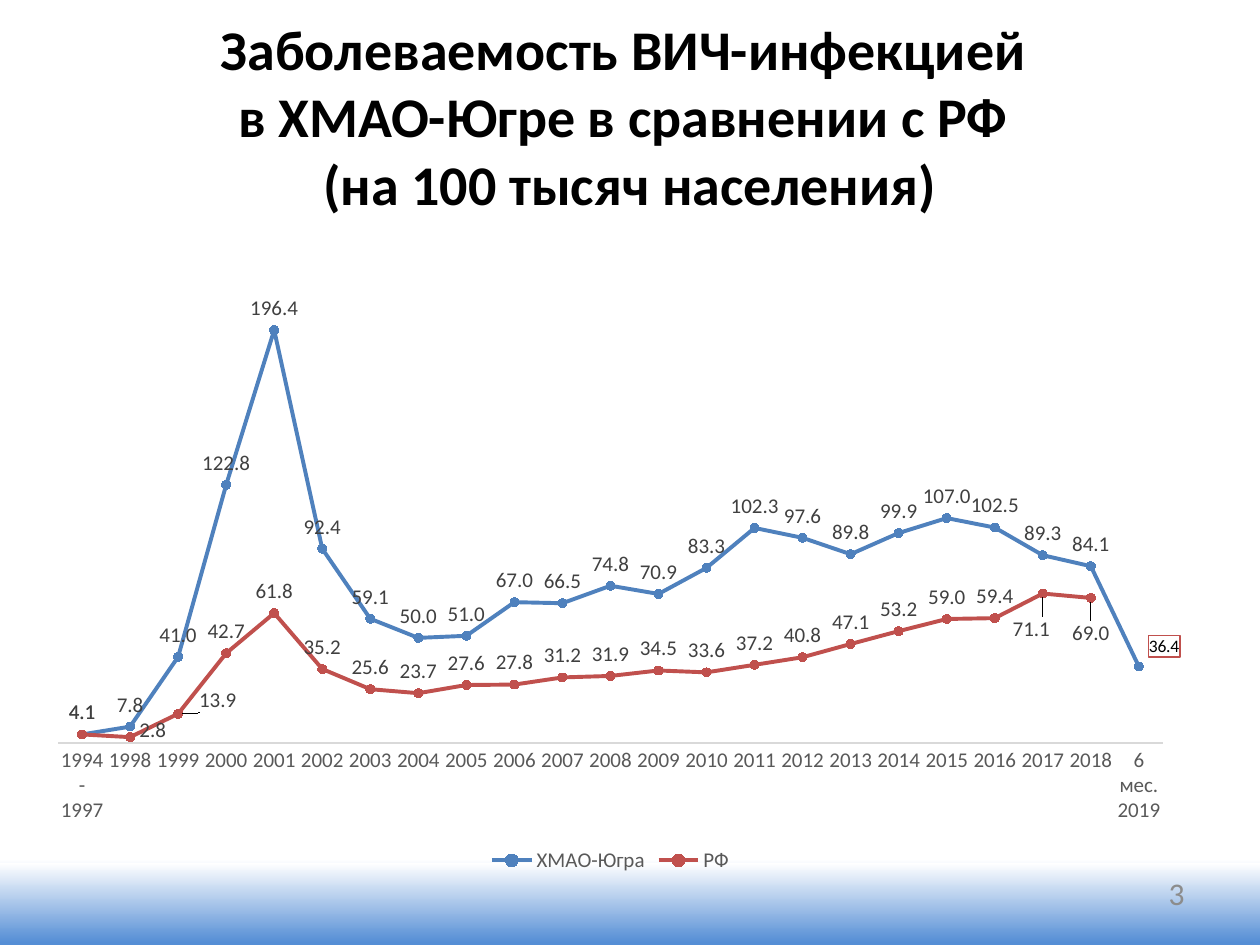
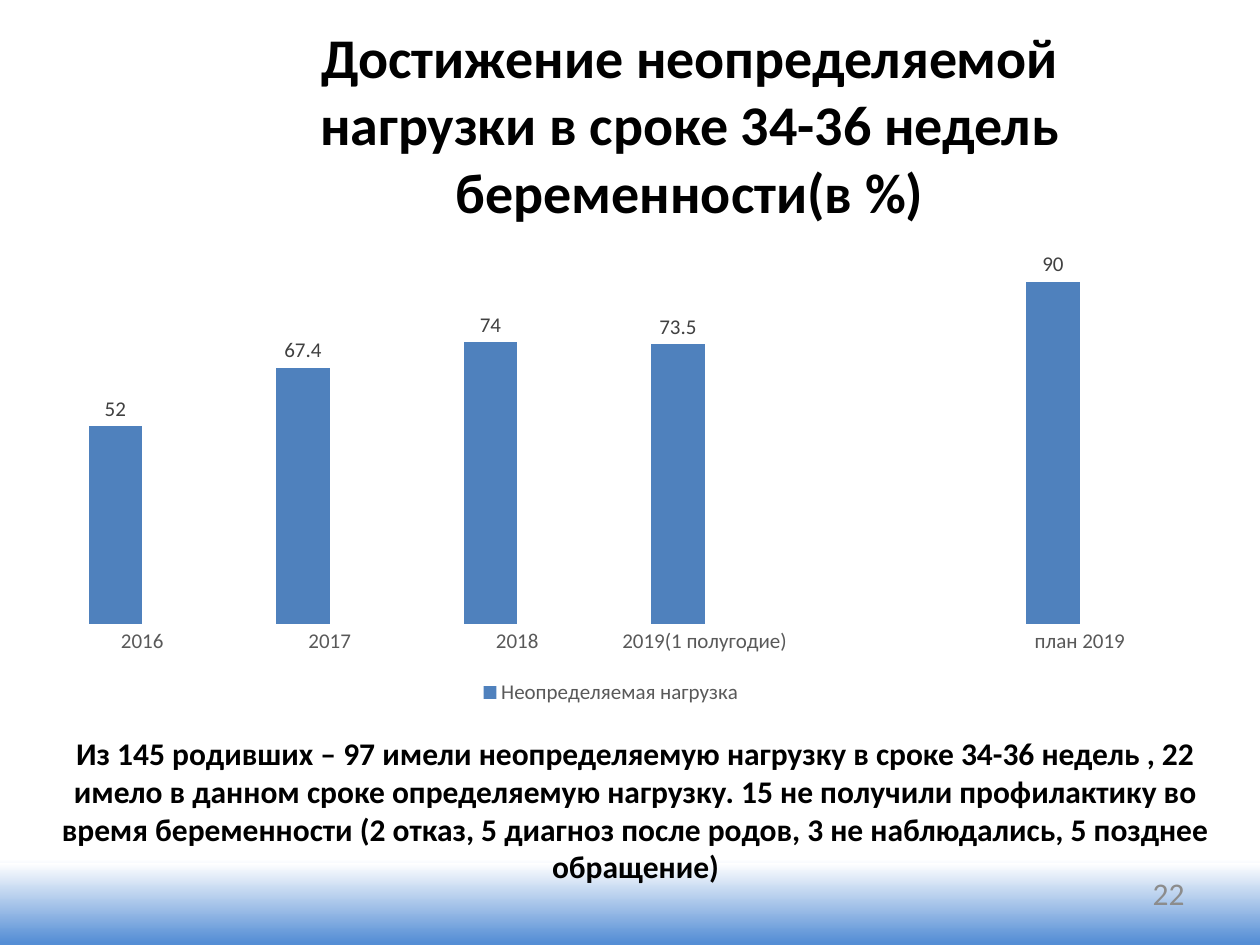
from dataclasses import dataclass

from lxml import etree
from pptx import Presentation
from pptx import util as u
from pptx.chart.data import CategoryChartData
from pptx.dml.color import RGBColor
from pptx.enum import chart as ch, shapes, text
from pptx.oxml import parse_xml
from pptx.oxml.ns import nsdecls, qn

SCALE = 914400 / 126  # EMU in one px


@dataclass(frozen=True)
class Theme:
    face: str = "Calibri"
    black: str = "000000"
    white: str = "FFFFFF"
    band: str = "558ED5"
    page: str = "8C8C8C"
    axis: str = "595959"
    label: str = "404040"
    rule: str = "D9D9D9"
    blue: str = "4F81BD"
    red: str = "C0504D"
    green: str = "9BBB59"
    head: int = 32
    body: int = 18
    small: int = 12
    tiny: int = 10


T = Theme()

YEARS = ["1994-1997", *map(str, range(1998, 2019)), "6 мес.2019"]
YUGRA = [4.1, 7.8, 41, 122.8, 196.4, 92.4, 59.1, 50, 51, 67, 66.5, 74.8,
         70.9, 83.3, 102.3, 97.6, 89.8, 99.9, 107, 102.5, 89.3, 84.1, 36.4]
RUSSIA = [4.1, 2.8, 13.9, 42.7, 61.8, 35.2, 25.6, 23.7, 27.6, 27.8, 31.2, 31.9,
          34.5, 33.6, 37.2, 40.8, 47.1, 53.2, 59, 59.4, 71.1, 69, None]
TERMS = ["2016", "2017", "2018", "2019(1 полугодие)", "", "план 2019"]
LOADS = [52, 67.4, 74, 73.5, None, 90]


# Basics
def px(*nums):
    return [u.Emu(round(n * SCALE)) for n in nums]


def rgb(code):
    return RGBColor.from_string(code)


def put(item, **vals):
    for name, val in vals.items():
        setattr(item, name, val)


def style(font, size, tint, bold=False):
    put(font, name=T.face, size=u.Pt(size), bold=bold)
    font.color.rgb = rgb(tint)


def paint(fill, tint):
    fill.solid()
    fill.fore_color.rgb = rgb(tint)


# Slide parts
def add_band(slide, top):
    band = slide.shapes.add_shape(
        shapes.MSO_SHAPE.ROUNDED_RECTANGLE, *px(0, top, 1260, 945 - top))
    band.adjustments[0] = 0
    band.shadow.inherit = False
    band.line.fill.background()
    band.fill.gradient()
    band.fill.gradient_angle = 90
    for stop, (pos, tint) in zip(band.fill.gradient_stops,
                                 [(0.03, T.band), (1, T.white)]):
        stop.position = pos
        stop.color.rgb = rgb(tint)


def add_text(slide, box, words, size, tint=T.black, bold=True,
             align=text.PP_ALIGN.CENTER):
    frame = slide.shapes.add_textbox(*px(*box)).text_frame
    put(frame, word_wrap=True, vertical_anchor=text.MSO_ANCHOR.MIDDLE)
    para = frame.paragraphs[0]
    para.text = words
    para.alignment = align
    for run in para.runs:
        style(run.font, size, tint, bold)


def add_page(deck, title, box, number):
    slide = deck.slides.add_slide(deck.slide_layouts[6])
    for top in (859, 863):
        add_band(slide, top)
    add_text(slide, box, title, T.head)
    add_text(slide, (1126, 859, 71, 67), number, T.body, T.page, False,
             text.PP_ALIGN.RIGHT)
    return slide


# Charts
def add_chart(slide, kind, box, cats, rows, form, peak, high):
    data = CategoryChartData(number_format=form)
    data.categories = cats
    for name, vals, tint in rows:
        data.add_series(name, vals)
    chart = slide.shapes.add_chart(kind, *px(*box), data).chart
    put(chart, has_title=False, has_legend=True)
    style(chart.font, T.tiny, T.black)
    put(chart.legend, position=ch.XL_LEGEND_POSITION.BOTTOM,
        include_in_layout=False)
    style(chart.legend.font, T.small, T.axis)
    put(chart.value_axis, visible=False, has_major_gridlines=False,
        minimum_scale=0, maximum_scale=peak)
    put(chart.category_axis, major_tick_mark=ch.XL_TICK_MARK.NONE)
    style(chart.category_axis.tick_labels.font, T.small, T.axis)
    chart.plots[0].vary_by_categories = False
    for line in chart.plots[0].series:
        put(line.data_labels, show_value=True, number_format=form,
            number_format_is_linked=False)
        style(line.data_labels.font, T.small, T.label)
    set_area(chart, high)
    return chart


def set_area(chart, high):
    area = chart._chartSpace.find(".//" + qn("c:plotArea"))
    for old in area.findall(qn("c:layout")):
        area.remove(old)
    sizes = "".join(f'<c:{key} val="{val}"/>' for key, val in
                    dict(x=0.02, y=0.02, w=0.96, h=high).items())
    area.insert(0, parse_xml(
        f'<c:layout {nsdecls("c")}><c:manualLayout>'
        '<c:layoutTarget val="inner"/><c:xMode val="edge"/>'
        f'<c:yMode val="edge"/>{sizes}</c:manualLayout></c:layout>'))


def move_label(line, spot, side, shift, size=T.small, tint=T.label):
    label = line.points[spot].data_label
    style(label.font, size, tint)
    label.position = side
    node = next(n for n in line._element.iter(qn("c:dLbl"))
                if n.find(qn("c:idx")).get("val") == str(spot))
    node.find(qn("c:idx")).addnext(parse_xml(
        f'<c:layout {nsdecls("c")}><c:manualLayout><c:x val="{shift[0]}"/>'
        f'<c:y val="{shift[1]}"/></c:manualLayout></c:layout>'))
    return node


def frame_label(node):
    node.find(qn("c:txPr")).addprevious(parse_xml(
        f'<c:spPr {nsdecls("c", "a")}><a:solidFill><a:srgbClr val="{T.white}"/>'
        f'</a:solidFill><a:ln w="9525"><a:solidFill><a:srgbClr val="{T.red}"/>'
        '</a:solidFill></a:ln></c:spPr>'))


def hide_entry(legend, spot):
    entry = etree.Element(qn("c:legendEntry"))
    for tag, val in (("c:idx", spot), ("c:delete", 1)):
        etree.SubElement(entry, qn(tag)).set("val", str(val))
    legend._element.find(qn("c:legendPos")).addnext(entry)


def add_lines(slide):
    rows = [("ХМАО-Югра", YUGRA, T.blue), ("РФ", RUSSIA, T.red)]
    chart = add_chart(slide, ch.XL_CHART_TYPE.LINE_MARKERS,
                      (35, 204, 1151, 674), YEARS, rows, "0.0", 250, 0.78)
    rule = chart.category_axis.format.line
    rule.color.rgb = rgb(T.rule)
    rule.width = u.Pt(0.75)
    for line, (name, vals, tint) in zip(chart.plots[0].series, rows):
        line.smooth = False
        line.format.line.color.rgb = rgb(tint)
        line.format.line.width = u.Pt(2.25)
        put(line.marker, style=ch.XL_MARKER_STYLE.CIRCLE, size=5)
        paint(line.marker.format.fill, tint)
        line.marker.format.line.color.rgb = rgb(tint)
        line.data_labels.position = ch.XL_LABEL_POSITION.ABOVE

    # Labels set apart from their points
    yugra, russia = chart.plots[0].series
    right, below = ch.XL_LABEL_POSITION.RIGHT, ch.XL_LABEL_POSITION.BELOW
    for spot, side, shift in [(1, right, (0, -0.01)), (2, right, (0.01, -0.02)),
                              (20, below, (-0.01, 0.02)), (21, below, (0, 0.02))]:
        move_label(russia, spot, side, shift)
    frame_label(move_label(yugra, 22, right, (0, -0.03), T.tiny, T.black))


def add_bars(slide):
    rows = [("Неопределяемая нагрузка", LOADS, T.blue),
            ("Series 2", [None] * len(TERMS), T.green)]
    chart = add_chart(slide, ch.XL_CHART_TYPE.COLUMN_CLUSTERED,
                      (25, 234, 1172, 476), TERMS, rows, "General", 100, 0.8)
    chart.category_axis.format.line.fill.background()
    put(chart.plots[0], gap_width=150, overlap=0)
    for bar, (name, vals, tint) in zip(chart.plots[0].series, rows):
        paint(bar.format.fill, tint)
        bar.data_labels.position = ch.XL_LABEL_POSITION.OUTSIDE_END
    hide_entry(chart.legend, 1)


def main():
    deck = Presentation()
    deck.slide_width, deck.slide_height = px(1260, 945)

    # Incidence by year
    slide = add_page(deck, "Заболеваемость ВИЧ-инфекцией \vв ХМАО-Югре в сравнении "
                     "с РФ \v(на 100 тысяч населения)", (63, 37, 1134, 157), "3")
    add_lines(slide)

    # Viral load in pregnancy
    slide = add_page(deck, "Достижение неопределяемой нагрузки в сроке 34-36 недель "
                     "беременности(в %)", (203, 45, 974, 157), "22")
    add_bars(slide)
    add_text(slide, (35, 731, 1201, 157),
             "Из 145 родивших – 97 имели неопределяемую нагрузку в сроке 34-36 "
             "недель , 22 имело в данном сроке определяемую нагрузку. 15 не получили "
             "профилактику во время беременности (2 отказ, 5 диагноз после родов, "
             "3 не наблюдались, 5 позднее обращение)", T.body)

    deck.save("out.pptx")


if __name__ == "__main__":
    main()
